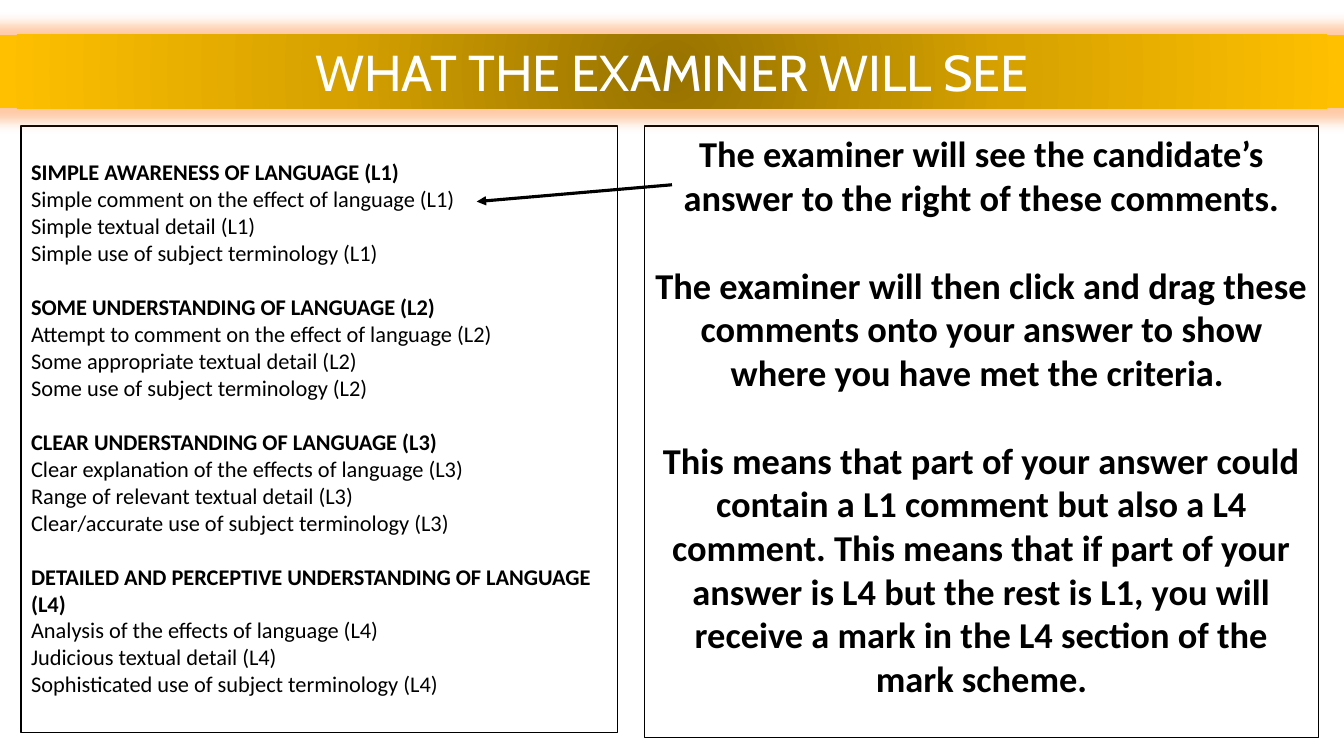
import pptx
import pptx.dml.color
import pptx.enum.shapes
import pptx.enum.text
import pptx.oxml
import pptx.oxml.ns
import pptx.util

EMU_PER_PX = 9525
COLOURS = {
    "ink": "000000",
    "title": "FFFFFF",
    "gold_dark": "977200",
    "gold_mid": "D7A200",
    "gold": "FFC000",
    "glow": "FF7A20",
}
ALIGN = pptx.enum.text.PP_ALIGN
ANCHOR = pptx.enum.text.MSO_ANCHOR

CRITERIA = [
    ("SIMPLE AWARENESS OF LANGUAGE (L1)",
     "Simple comment on the effect of language (L1)",
     "Simple textual detail (L1)",
     "Simple use of subject terminology (L1)"),
    ("SOME UNDERSTANDING OF LANGUAGE (L2)",
     "Attempt to comment on the effect of language (L2)",
     "Some appropriate textual detail (L2)",
     "Some use of subject terminology (L2)"),
    ("CLEAR UNDERSTANDING OF LANGUAGE (L3)",
     "Clear explanation of the effects of language (L3)",
     "Range of relevant textual detail (L3)",
     "Clear/accurate use of subject terminology (L3)"),
    ("DETAILED AND PERCEPTIVE UNDERSTANDING OF LANGUAGE (L4)",
     "Analysis of the effects of language (L4)",
     "Judicious textual detail (L4)",
     "Sophisticated use of subject terminology (L4)"),
]
EXPLANATION = [
    "The examiner will see the candidate’s answer to the right of these comments.",
    "The examiner will then click and drag these comments onto your answer to show "
    "where you have met the criteria. ",
    "This means that part of your answer could contain a L1 comment but also a L4 "
    "comment. This means that if part of your answer is L4 but the rest is L1, you "
    "will receive a mark in the L4 section of the mark scheme.",
]


def px(length):
    return pptx.util.Emu(length * EMU_PER_PX)


def rgb(name):
    return pptx.dml.color.RGBColor.from_string(COLOURS[name])


def xml(markup):
    """Parse markup whose root is an element in the a: namespace."""
    namespace = pptx.oxml.ns.nsdecls("a")
    return pptx.oxml.parse_xml(markup.replace(">", f" {namespace}>", 1))


def write(paragraph, text, *, size, colour="ink", font="Calibri", bold=False,
          align=ALIGN.LEFT, before=0):
    """Fill a paragraph with one run, without a bullet or indent."""
    paragraph.alignment = align
    paragraph.space_before = pptx.util.Pt(before)
    properties = paragraph._p.get_or_add_pPr()
    properties.set("marL", "0")
    properties.set("indent", "0")
    properties.append(xml("<a:buNone></a:buNone>"))
    run = paragraph.add_run()
    run.text = text
    run.font.name = font
    run.font.size = pptx.util.Pt(size)
    run.font.bold = bold
    run.font.color.rgb = rgb(colour)


class ExaminerSlide:
    def __init__(self, deck):
        self.slide = deck.slides.add_slide(deck.slide_layouts[3])

    def place(self, holder, left, top, width, height, anchor, inset_top=5):
        holder.left, holder.top = px(left), px(top)
        holder.width, holder.height = px(width), px(height)
        frame = holder.text_frame
        frame.word_wrap = True
        frame.auto_size = pptx.enum.text.MSO_AUTO_SIZE.NONE
        frame.vertical_anchor = anchor
        frame.margin_top = px(inset_top)
        return frame

    def panel(self, index, box, lines, inset_top=5):
        """Outline a body placeholder and write (text, format) lines in it."""
        holder = self.slide.placeholders[index]
        frame = self.place(holder, *box, ANCHOR.TOP, inset_top)
        holder.line.color.rgb = rgb("ink")
        holder.line.width = pptx.util.Pt(0.75)
        for number, (text, style) in enumerate(lines):
            paragraph = frame.add_paragraph() if number else frame.paragraphs[0]
            write(paragraph, text, **style)

    def arrow(self, start, end):
        pointer = self.slide.shapes.add_connector(
            pptx.enum.shapes.MSO_CONNECTOR.STRAIGHT, *map(px, start + end))
        pointer.line.color.rgb = rgb("ink")
        pointer.line.width = pptx.util.Pt(2.25)
        pointer.line._get_or_add_ln().append(
            xml('<a:tailEnd type="triangle"></a:tailEnd>'))
        pointer.element.spPr.append(xml("<a:effectLst></a:effectLst>"))

    def banner(self, text, box):
        """Put the title on a glowing radial gradient, in front of the rest."""
        title = self.slide.shapes.title
        frame = self.place(title, *box, ANCHOR.MIDDLE)
        write(frame.paragraphs[0], text, size=36, colour="title", font="Cabin",
              align=ALIGN.CENTER)
        stops = "".join(
            f'<a:gs pos="{position}"><a:srgbClr val="{COLOURS[name]}"/></a:gs>'
            for position, name in ((0, "gold_dark"), (50000, "gold_mid"),
                                   (100000, "gold")))
        properties = title.element.spPr
        properties.append(xml(
            f'<a:gradFill><a:gsLst>{stops}</a:gsLst><a:path path="circle">'
            '<a:fillToRect l="50000" t="50000" r="50000" b="50000"/>'
            '</a:path></a:gradFill>'))
        properties.append(xml(
            '<a:effectLst><a:glow rad="228600">'
            f'<a:srgbClr val="{COLOURS["glow"]}"><a:alpha val="40000"/></a:srgbClr>'
            '</a:glow></a:effectLst>'))
        title.element.getparent().append(title.element)


def main():
    deck = pptx.Presentation()
    deck.slide_width, deck.slide_height = px(1280), px(720)
    page = ExaminerSlide(deck)

    criteria_lines = [
        (text, {"size": 16, "bold": row == 0,
                "before": 19.5 if level and row == 0 else 0})
        for level, group in enumerate(CRITERIA)
        for row, text in enumerate(group)]
    explanation_lines = [
        (text, {"size": 26, "bold": True, "align": ALIGN.CENTER,
                "before": 31.5 if number else 0})
        for number, text in enumerate(EXPLANATION)]

    page.panel(1, (20, 120, 568, 578), criteria_lines, inset_top=31)
    page.panel(2, (614, 120, 642, 582), explanation_lines)
    page.arrow((640, 176), (454, 192))
    page.banner("WHAT THE EXAMINER WILL SEE", (0, 33, 1280, 70))
    deck.save("out.pptx")


if __name__ == "__main__":
    main()
